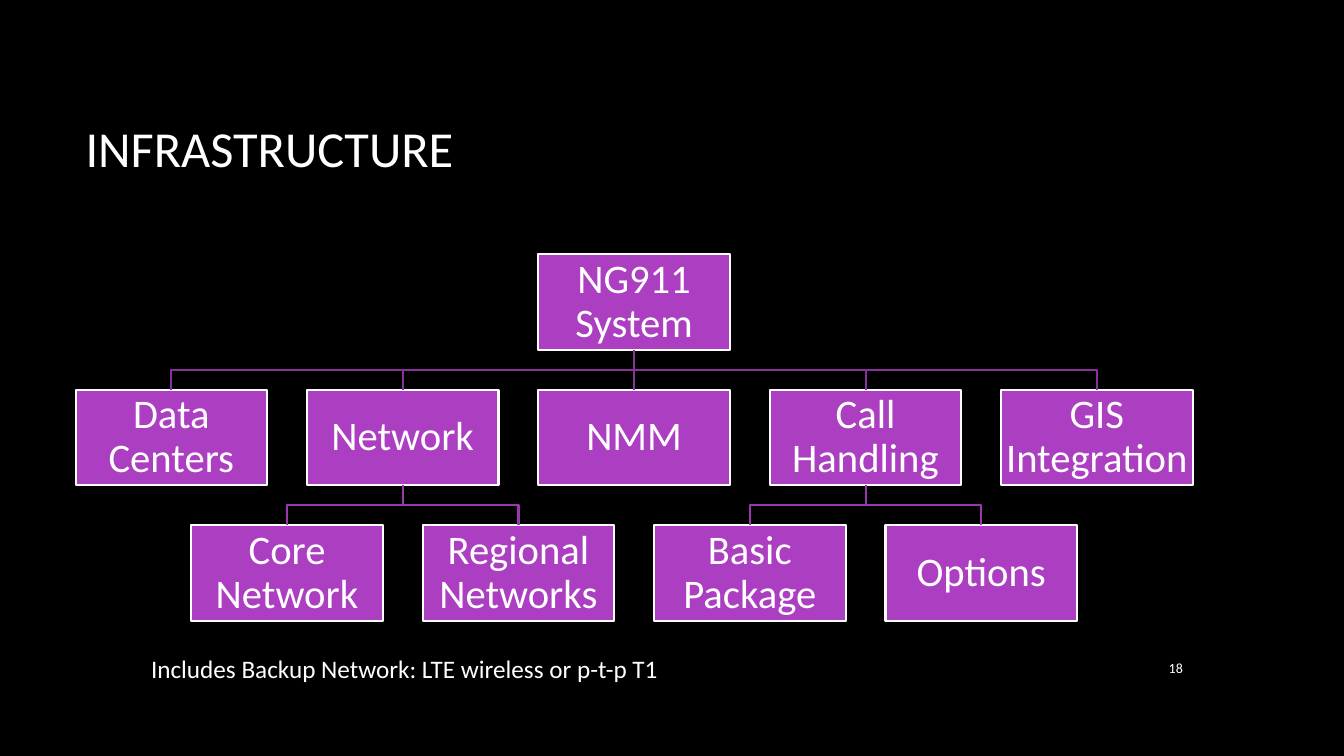
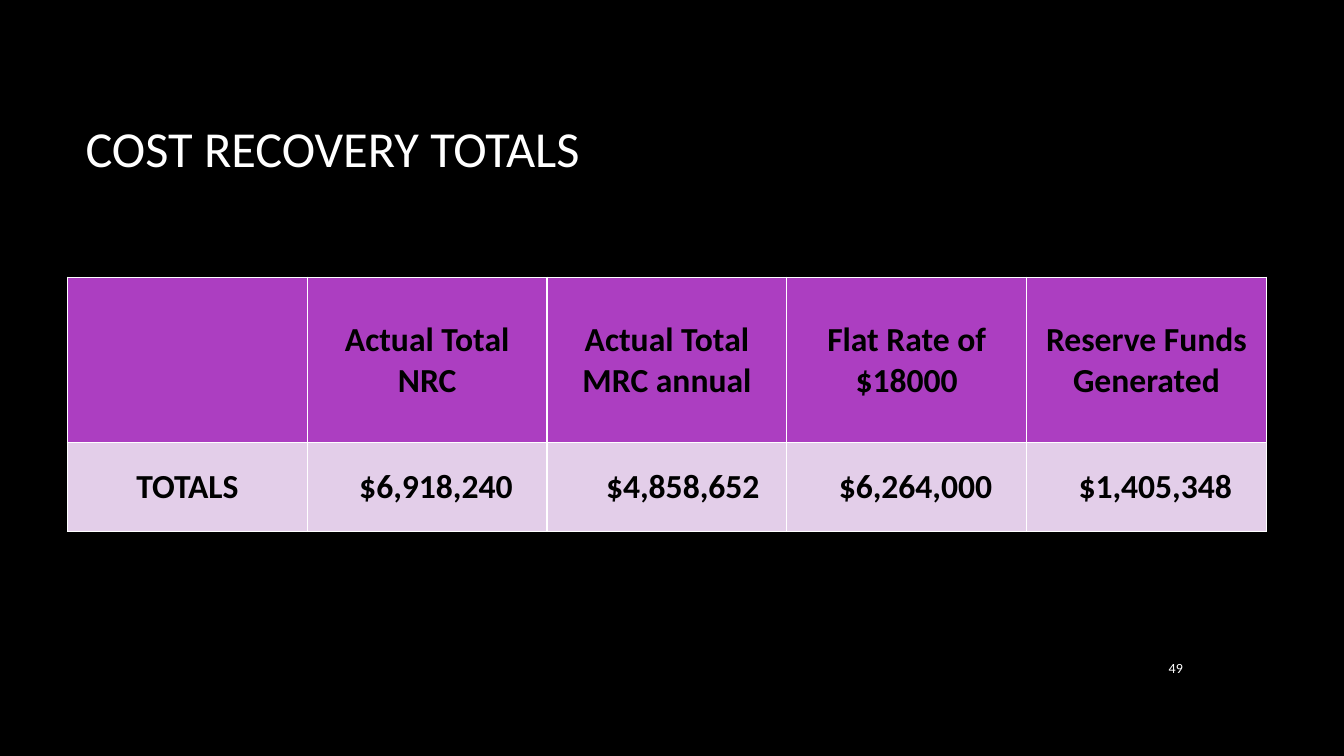
from dataclasses import dataclass

from lxml import etree
from pptx import Presentation
from pptx.dml.color import RGBColor
from pptx.enum.shapes import MSO_CONNECTOR, MSO_SHAPE
from pptx.enum.text import MSO_ANCHOR, PP_ALIGN
from pptx.oxml.ns import qn
from pptx.util import Inches, Pt

ELBOW, STRAIGHT = MSO_CONNECTOR.ELBOW, MSO_CONNECTOR.STRAIGHT
RECT = MSO_SHAPE.RECTANGLE
TOP, MIDDLE = MSO_ANCHOR.TOP, MSO_ANCHOR.MIDDLE
LEFT, CENTER, RIGHT = PP_ALIGN.LEFT, PP_ALIGN.CENTER, PP_ALIGN.RIGHT
TOP_SITE, BOTTOM_SITE = 0, 2


@dataclass(frozen=True)
class Theme:
    """Colours, font and type sizes shared by the slides."""

    background: str = "000000"
    light: str = "FFFFFF"
    dark: str = "000000"
    accent: str = "AC3EC1"
    tint: str = "E3CEE9"
    branch: tuple = ("8A329B", "9C38AF")
    font: str = "Calibri"
    title: int = 36
    node: int = 29
    table: int = 24
    note: int = 18
    number: int = 10
    line: float = 1.5
    border: int = 1


THEME = Theme()

CHART_LEFT, CHART_TOP, CHART_WIDTH, CHART_HEIGHT = 0.75, 2.52, 11.08, 3.64
NODE_WIDTH, NODE_HEIGHT = 1.9, 0.95
COLUMN_PITCH = (CHART_WIDTH - NODE_WIDTH) / 4
ROW_PITCH = (CHART_HEIGHT - NODE_HEIGHT) / 2

NODES = {
    "NG911 System": (2, 0, None),
    "Data Centers": (0, 1, "NG911 System"),
    "Network": (1, 1, "NG911 System"),
    "NMM": (2, 1, "NG911 System"),
    "Call Handling": (3, 1, "NG911 System"),
    "GIS Integration": (4, 1, "NG911 System"),
    "Core Network": (0.5, 2, "Network"),
    "Regional Networks": (1.5, 2, "Network"),
    "Basic Package": (2.5, 2, "Call Handling"),
    "Options": (3.5, 2, "Call Handling"),
}

HEADERS = ["", "Actual Total\vNRC", "Actual Total MRC annual",
           "Flat Rate of $18000", "Reserve Funds Generated"]
TOTALS = [("$6,918,240", 0.34), ("$4,858,652", 0.27),
          ("$6,264,000", 0.34), ("$1,405,348", 0.34)]


def rgb(color):
    """Turn a hex string into a colour."""
    return RGBColor.from_string(color)


def style_text(tf, size, color=THEME.light, align=LEFT, bold=False):
    """Format every paragraph and run of a text frame."""
    for p in tf.paragraphs:
        p.alignment = align
        for r in p.runs:
            r.font.name = THEME.font
            r.font.size = Pt(size)
            r.font.bold = bold
            r.font.color.rgb = rgb(color)


def add_text(s, text, box, size, anchor=MIDDLE, align=LEFT):
    """Add a text box."""
    tf = s.shapes.add_textbox(*map(Inches, box)).text_frame
    tf.word_wrap = True
    tf.vertical_anchor = anchor
    tf.text = text
    style_text(tf, size, align=align)


def add_slide(prs, title, number):
    """Add a slide with its title and number."""
    s = prs.slides.add_slide(prs.slide_layouts[6])
    add_text(s, title, (0.75, 0.67, 11.08, 1.59), THEME.title)
    add_text(s, str(number), (11.23, 6.42, 0.6, 0.41), THEME.number, align=RIGHT)
    return s


def add_node(s, text, column, row):
    """Add one box of the organisation chart."""
    sp = s.shapes.add_shape(RECT,
                            Inches(CHART_LEFT + column * COLUMN_PITCH),
                            Inches(CHART_TOP + row * ROW_PITCH),
                            Inches(NODE_WIDTH), Inches(NODE_HEIGHT))
    sp.shadow.inherit = False
    sp.fill.solid()
    sp.fill.fore_color.rgb = rgb(THEME.accent)
    sp.line.color.rgb = rgb(THEME.light)
    sp.line.width = Pt(THEME.line)
    tf = sp.text_frame
    tf.word_wrap = True
    tf.vertical_anchor = MIDDLE
    tf.margin_left = tf.margin_right = Inches(0.02)
    tf.margin_top = tf.margin_bottom = Inches(0.02)
    tf.text = text
    tf.paragraphs[0].line_spacing = 0.9
    style_text(tf, THEME.node, align=CENTER)
    return sp


def add_branch(s, parent, child, color):
    """Join the bottom of a parent box to the top of its child."""
    x1, y1 = parent.left + parent.width // 2, parent.top + parent.height
    x2, y2 = child.left + child.width // 2, child.top
    dx, dy = x2 - x1, y2 - y1
    c = s.shapes.add_connector(ELBOW if dx else STRAIGHT, x1, y1, x2, y2)
    c.begin_connect(parent, BOTTOM_SITE)
    c.end_connect(child, TOP_SITE)
    if dx:
        c.width, c.height = dy, abs(dx)
        c.left = (x1 + x2 - dy) // 2
        c.top = (y1 + y2 - abs(dx)) // 2
        xfrm = c.element.spPr.find(qn("a:xfrm"))
        xfrm.set("rot", "16200000" if dx > 0 else "5400000")
        xfrm.set("flipH", "1" if dx > 0 else "0")
    c.line.color.rgb = rgb(color)
    c.line.width = Pt(THEME.line)
    etree.SubElement(c.element.spPr, qn("a:effectLst"))


def set_borders(cell):
    """Draw the four borders of a table cell."""
    tc_pr = cell._tc.get_or_add_tcPr()
    for side in ("lnL", "lnR", "lnT", "lnB"):
        ln = etree.SubElement(tc_pr, qn(f"a:{side}"), w=str(Pt(THEME.border)))
        fill = etree.SubElement(ln, qn("a:solidFill"))
        etree.SubElement(fill, qn("a:srgbClr"), val=THEME.light)


def fill_cell(cell, text, color, align=CENTER, margin_right=0.01):
    """Write and format one table cell."""
    set_borders(cell)
    cell.fill.solid()
    cell.fill.fore_color.rgb = rgb(color)
    cell.vertical_anchor = MIDDLE
    cell.margin_left = cell.margin_top = Inches(0.01)
    cell.margin_right = Inches(margin_right)
    cell.margin_bottom = 0
    cell.text = text
    style_text(cell.text_frame, THEME.table, THEME.dark, align, bold=True)


def add_totals_table(s):
    """Add the table of cost recovery totals."""
    table = s.shapes.add_table(2, len(HEADERS), Inches(0.67), Inches(2.75),
                               Inches(11.89), Inches(2.52)).table
    table.rows[0].height = Inches(1.64)
    table.rows[1].height = Inches(0.88)
    for i, text in enumerate(HEADERS):
        fill_cell(table.cell(0, i), text, THEME.accent)
    fill_cell(table.cell(1, 0), "TOTALS", THEME.tint)
    for i, (text, margin) in enumerate(TOTALS, 1):
        fill_cell(table.cell(1, i), text, THEME.tint, RIGHT, margin)


def add_infrastructure(prs):
    """Build the infrastructure slide."""
    s = add_slide(prs, "INFRASTRUCTURE", 18)
    boxes = {}
    for text, (column, row, parent) in NODES.items():
        boxes[text] = add_node(s, text, column, row)
        if parent:
            add_branch(s, boxes[parent], boxes[text], THEME.branch[row - 1])
    add_text(s, "Includes Backup Network: LTE wireless or p-t-p T1",
             (1.4, 6.43, 5.4, 0.4), THEME.note, anchor=TOP)


def add_cost_recovery(prs):
    """Build the cost recovery slide."""
    s = add_slide(prs, "COST RECOVERY TOTALS", 49)
    add_totals_table(s)


def main():
    """Build and save the presentation."""
    prs = Presentation()
    prs.slide_width, prs.slide_height = Inches(13.33), Inches(7.5)
    fill = prs.slide_master.background.fill
    fill.solid()
    fill.fore_color.rgb = rgb(THEME.background)
    add_infrastructure(prs)
    add_cost_recovery(prs)
    prs.save("out.pptx")


if __name__ == "__main__":
    main()
